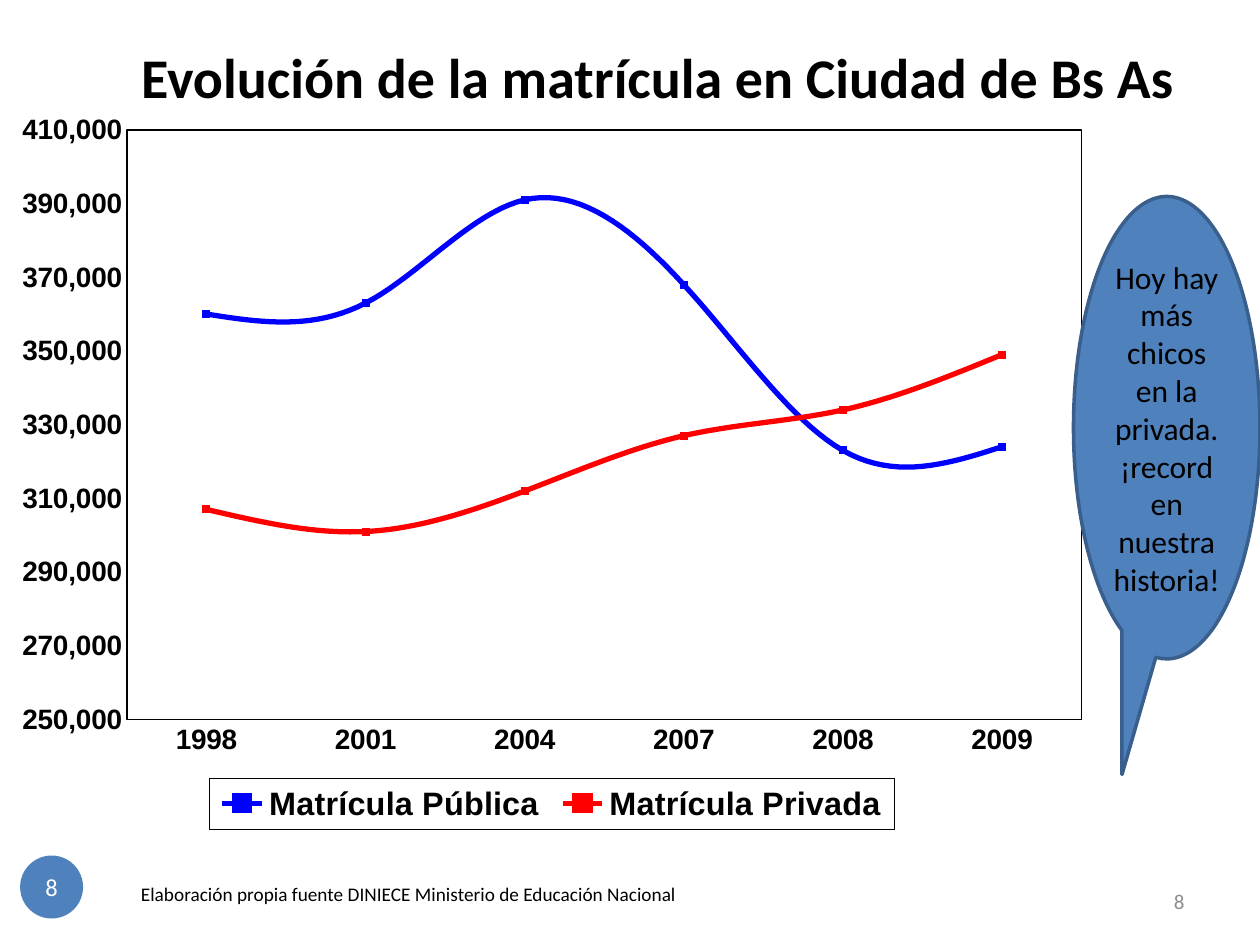
"""Build the slide on school enrolment in the city of Buenos Aires."""
from dataclasses import dataclass

from pptx import Presentation
from pptx.chart.data import CategoryChartData
from pptx.dml.color import RGBColor
from pptx.enum.chart import XL_CHART_TYPE as ChartType
from pptx.enum.chart import XL_LEGEND_POSITION as LegendPosition
from pptx.enum.chart import XL_MARKER_STYLE as MarkerStyle
from pptx.enum.chart import XL_TICK_MARK as TickMark
from pptx.enum.shapes import MSO_SHAPE as Shape
from pptx.enum.text import MSO_ANCHOR as Anchor
from pptx.enum.text import PP_ALIGN as Align
from pptx.oxml import parse_xml
from pptx.oxml.ns import nsdecls, qn
from pptx.util import Inches, Pt


@dataclass(frozen=True)
class Theme:
    black: str = "000000"
    white: str = "FFFFFF"
    gray: str = "8C8C8C"
    accent: str = "4F81BD"
    accent_dark: str = "3A5F8C"
    public: str = "0000FF"
    private: str = "FF0000"
    text_font: str = "Calibri"
    chart_font: str = "Arial"
    title: float = 32
    callout: float = 18
    badge: float = 14
    number: float = 12
    source: float = 11
    axis: float = 16
    legend: float = 18.5


def color(code):
    return RGBColor.from_string(code)


def frame_xml(tag, line_code, line_width, fill_code):
    return parse_xml(
        f'<c:{tag} {nsdecls("c", "a")}>'
        f'<a:solidFill><a:srgbClr val="{fill_code}"/></a:solidFill>'
        f'<a:ln w="{Pt(line_width)}"><a:solidFill><a:srgbClr val="{line_code}"/>'
        f'</a:solidFill></a:ln></c:{tag}>')


def layout_xml(left, top, width, height, inner=False):
    target = '<c:layoutTarget val="inner"/>' if inner else ""
    return parse_xml(
        f'<c:layout {nsdecls("c")}><c:manualLayout>{target}'
        '<c:xMode val="edge"/><c:yMode val="edge"/>'
        f'<c:x val="{left}"/><c:y val="{top}"/><c:w val="{width}"/><c:h val="{height}"/>'
        '</c:manualLayout></c:layout>')


class SlideBuilder:
    columns, rows = 100, 75

    def __init__(self, deck, theme):
        self.deck, self.theme = deck, theme
        self.page = deck.slides.add_slide(deck.slide_layouts[5])

    def area(self, left, top, width, height):
        column = self.deck.slide_width / self.columns
        row = self.deck.slide_height / self.rows
        return [int(size) for size in
                (left * column, top * row, width * column, height * row)]

    def style(self, font, size, code, face, bold=False):
        font.size, font.name, font.bold = Pt(size), face, bold
        font.color.rgb = color(code)

    def add_words(self, box, words, size, code, align=Align.LEFT,
                  anchor=Anchor.TOP, wrap=True, bold=False):
        frame = box.text_frame
        frame.word_wrap, frame.vertical_anchor = wrap, anchor
        para = frame.paragraphs[0]
        para.alignment = align
        span = para.add_run()
        span.text = words
        self.style(span.font, size, code, self.theme.text_font, bold)

    def title(self, words, *cells):
        box = self.page.shapes.title
        box.left, box.top, box.width, box.height = self.area(*cells)
        self.add_words(box, words, self.theme.title, self.theme.black,
                       wrap=False, bold=True)

    def text(self, words, size, code, *cells, **options):
        box = self.page.shapes.add_textbox(*self.area(*cells))
        self.add_words(box, words, size, code, **options)

    def shape(self, kind, words, size, code, *cells, line=None, margin=None,
              adjust=(), wrap=True):
        box = self.page.shapes.add_shape(kind, *self.area(*cells))
        box.shadow.inherit = False
        box.fill.solid()
        box.fill.fore_color.rgb = color(self.theme.accent)
        if line:
            box.line.color.rgb, box.line.width = color(line), Pt(2)
        else:
            box.line.fill.background()
        for index, value in enumerate(adjust):
            box.adjustments[index] = value
        if margin is not None:
            frame = box.text_frame
            frame.margin_left = frame.margin_right = margin
            frame.margin_top = frame.margin_bottom = margin
        self.add_words(box, words, size, code, Align.CENTER, Anchor.MIDDLE, wrap)

    def axis(self, axis):
        theme = self.theme
        axis.has_major_gridlines = False
        axis.major_tick_mark = axis.minor_tick_mark = TickMark.NONE
        axis.format.line.color.rgb = color(theme.black)
        axis.format.line.width = Pt(0.25)
        self.style(axis.tick_labels.font, theme.axis, theme.black, theme.chart_font, True)

    def line_chart(self, years, series, low, high, step, *cells):
        theme = self.theme
        data = CategoryChartData(number_format="#,##0")
        data.categories = years
        for name, values, _ in series:
            data.add_series(name, values)
        chart = self.page.shapes.add_chart(
            ChartType.LINE_MARKERS, *self.area(*cells), data).chart
        chart.has_title = False
        self.style(chart.font, theme.axis, theme.black, theme.chart_font, True)
        for axis in (chart.category_axis, chart.value_axis):
            self.axis(axis)
        scale = chart.value_axis
        scale.minimum_scale, scale.maximum_scale, scale.major_unit = low, high, step
        scale.tick_labels.number_format = "#,##0"
        scale.tick_labels.number_format_is_linked = False
        plot = chart.plots[0]
        plot.vary_by_categories = False
        for curve, (_, _, code) in zip(plot.series, series):
            curve.smooth = True
            curve.format.line.color.rgb = color(code)
            curve.format.line.width = Pt(3)
            curve.marker.style, curve.marker.size = MarkerStyle.SQUARE, 4
            curve.marker.format.fill.solid()
            curve.marker.format.fill.fore_color.rgb = color(code)
            curve.marker.format.line.color.rgb = color(code)
        self.legend(chart)
        plot_area = chart._chartSpace.chart.plotArea
        for layout in plot_area.findall(qn("c:layout")):
            plot_area.remove(layout)
        plot_area.insert(0, layout_xml(0.115, 0.04, 0.865, 0.81, inner=True))
        plot_area.append(frame_xml("spPr", theme.black, 1, theme.white))

    def legend(self, chart):
        theme = self.theme
        chart.has_legend = True
        legend = chart.legend
        legend.position, legend.include_in_layout = LegendPosition.BOTTOM, False
        self.style(legend.font, theme.legend, theme.black, theme.chart_font, True)
        element = legend._element
        for layout in element.findall(qn("c:layout")):
            element.remove(layout)
        overlay = element.find(qn("c:overlay"))
        overlay.addprevious(layout_xml(0.19, 0.93, 0.62, 0.07))
        overlay.addnext(frame_xml("spPr", theme.black, 0.25, theme.white))


def main():
    deck, theme = Presentation(), Theme()
    deck.slide_width, deck.slide_height = Inches(10), Inches(7.5)
    slide = SlideBuilder(deck, theme)
    slide.title("Evolución de la matrícula en Ciudad de Bs As", 10.2, 2.9, 84.7, 6.4)
    slide.text("8", theme.number, theme.gray, 71.7, 69.5, 23.3, 4,
               align=Align.RIGHT, anchor=Anchor.MIDDLE)
    slide.line_chart(
        ["1998", "2001", "2004", "2007", "2008", "2009"],
        [("Matrícula Pública", (360000, 363000, 391000, 368000, 323000, 324000),
          theme.public),
         ("Matrícula Privada", (307000, 301000, 312000, 327000, 334000, 349000),
          theme.private)],
        250000, 410000, 20000, 0, 8, 87.6, 57.8)
    slide.shape(Shape.OVAL, "8", theme.badge, theme.white, 1.6, 67.9, 5, 5,
                margin=0, wrap=False)
    slide.text("Elaboración propia fuente DINIECE Ministerio de Educación Nacional",
               theme.source, theme.black, 10.2, 69.5, 57, 2.9)
    slide.shape(Shape.OVAL_CALLOUT,
                "Hoy hay más chicos en la privada. ¡record en nuestra historia!",
                theme.callout, theme.black, 85.2, 15.6, 14.8, 36.7,
                line=theme.accent_dark, adjust=(-0.24, 0.75))
    deck.save("out.pptx")


if __name__ == "__main__":
    main()
